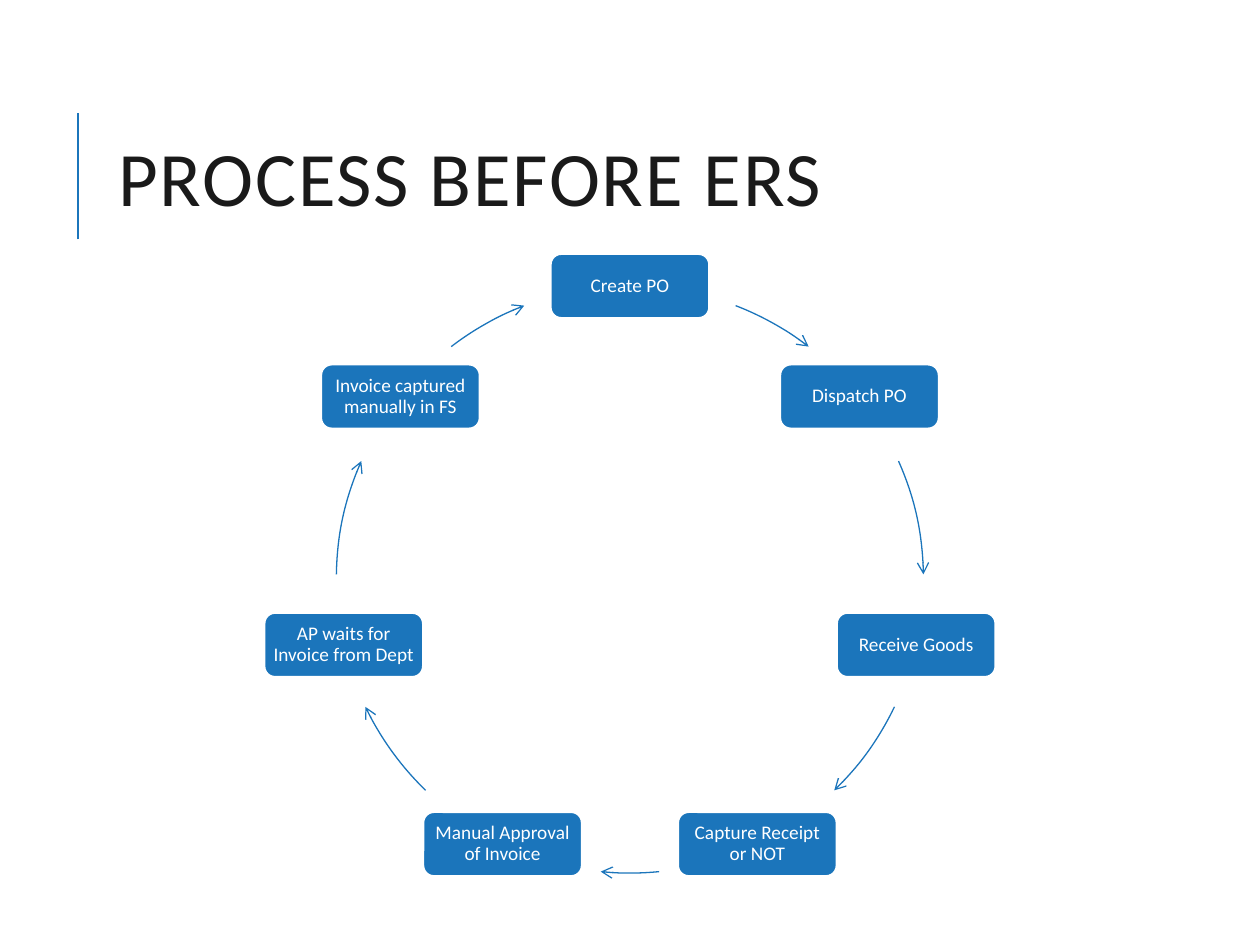
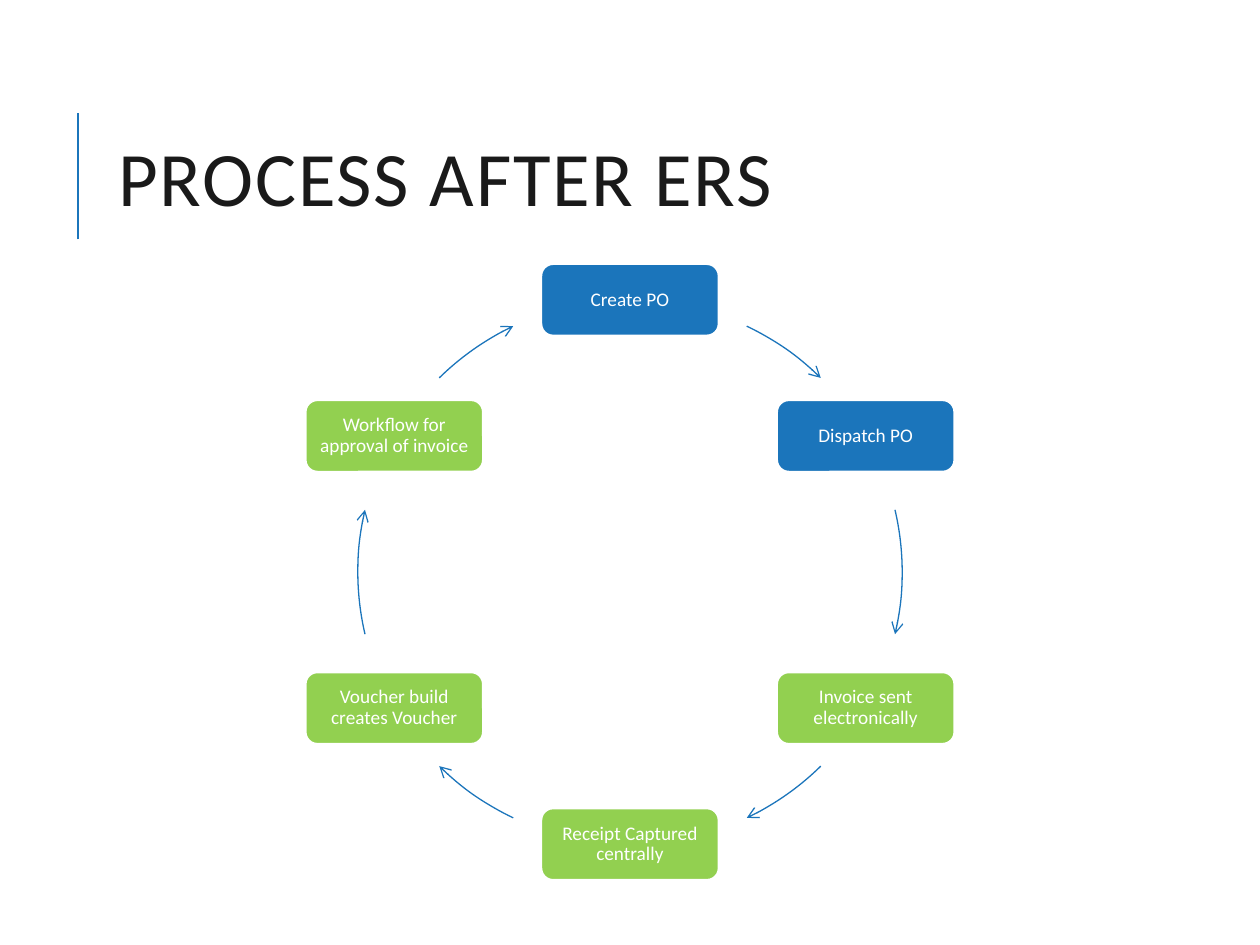
import math

import lxml.etree
import pptx
import pptx.dml.color
import pptx.enum.shapes
import pptx.enum.text
import pptx.oxml.ns
import pptx.util

Inches = pptx.util.Inches
Pt = pptx.util.Pt
MSO_SHAPE = pptx.enum.shapes.MSO_SHAPE
MSO_ANCHOR = pptx.enum.text.MSO_ANCHOR
PP_ALIGN = pptx.enum.text.PP_ALIGN
qn = pptx.oxml.ns.qn

BLUE, GREEN, WHITE, INK = "1B75BB", "92D050", "FFFFFF", "1A1A1A"
FONT = "Calibri"
CENTER_X = 5


def rgb(value):
    return pptx.dml.color.RGBColor.from_string(value)


def style_text(p, size, color, align, spacing):
    p.alignment = align
    p.line_spacing = spacing
    for r in p.runs:
        r.font.size = Pt(size)
        r.font.name = FONT
        r.font.color.rgb = rgb(color)


cycles = [
    {
        "title": "PROCESS BEFORE ERS",
        "center_y": 4.6,
        "radius": 2.33,
        "box": (1.26, 0.51),
        "steps": [
            ("Create PO", BLUE),
            ("Dispatch PO", BLUE),
            ("Receive Goods", BLUE),
            ("Capture Receipt or NOT", BLUE),
            ("Manual Approval of Invoice", BLUE),
            ("AP waits for Invoice from Dept", BLUE),
            ("Invoice captured manually in FS", BLUE),
        ],
        "right_arcs": [(21.1, 37.5), (66.2, 89), (115.7, 135.9)],
        "bottom_arcs": [(174.3, 185.7)],
    },
    {
        "title": "PROCESS AFTER ERS",
        "center_y": 4.54,
        "radius": 2.16,
        "box": (1.41, 0.57),
        "steps": [
            ("Create PO", BLUE),
            ("Dispatch PO", BLUE),
            ("Invoice sent electronically", GREEN),
            ("Receipt Captured centrally", GREEN),
            ("Voucher build creates Voucher", GREEN),
            ("Workflow for approval of invoice", GREEN),
        ],
        "right_arcs": [(25.4, 44.5), (76.8, 103.2), (135.5, 154.6)],
        "bottom_arcs": [],
    },
]

prs = pptx.Presentation()
prs.slide_width = Inches(10)
prs.slide_height = Inches(7.5)

for cycle in cycles:
    s = prs.slides.add_slide(prs.slide_layouts[5])

    rule = s.shapes.add_connector(
        pptx.enum.shapes.MSO_CONNECTOR.STRAIGHT,
        Inches(0.62), Inches(1.9), Inches(0.62), Inches(0.9))
    rule.line.color.rgb = rgb(BLUE)
    rule.line.width = Pt(1.5)
    lxml.etree.SubElement(rule._element.spPr, qn("a:effectLst"))

    title = s.shapes.title
    title.left, title.top = Inches(0.84), Inches(0.64)
    title.width, title.height = Inches(7.97), Inches(1.64)
    tf = title.text_frame
    tf.text = cycle["title"]
    tf.vertical_anchor = MSO_ANCHOR.MIDDLE
    tf.auto_size = pptx.enum.text.MSO_AUTO_SIZE.NONE
    style_text(tf.paragraphs[0], 44, INK, PP_ALIGN.LEFT, 0.8)
    tf.paragraphs[0].runs[0].font._element.set("spc", "100")

    center_y, radius = cycle["center_y"], cycle["radius"]
    width, height = cycle["box"]
    for i, (text, color) in enumerate(cycle["steps"]):
        angle = 2 * math.pi * i / len(cycle["steps"])
        x = CENTER_X + radius * math.sin(angle)
        y = center_y - radius * math.cos(angle)
        sp = s.shapes.add_shape(
            MSO_SHAPE.ROUNDED_RECTANGLE,
            Inches(x - width / 2), Inches(y - height / 2),
            Inches(width), Inches(height))
        sp.shadow.inherit = False
        sp.fill.solid()
        sp.fill.fore_color.rgb = rgb(color)
        sp.line.color.rgb = rgb(WHITE)
        sp.line.width = Pt(1.25)
        tf = sp.text_frame
        tf.text = text
        tf.word_wrap = True
        tf.vertical_anchor = MSO_ANCHOR.MIDDLE
        tf.margin_left = tf.margin_right = Inches(0.04)
        tf.margin_top = tf.margin_bottom = Inches(0.04)
        style_text(tf.paragraphs[0], 11, WHITE, PP_ALIGN.CENTER, 0.9)

    left_arcs = [(360 - end, 360 - start)
                 for start, end in reversed(cycle["right_arcs"])]
    for arc in cycle["right_arcs"] + cycle["bottom_arcs"] + left_arcs:
        sp = s.shapes.add_shape(
            MSO_SHAPE.ARC,
            Inches(CENTER_X - radius), Inches(center_y - radius),
            Inches(2 * radius), Inches(2 * radius))
        for i, degrees in enumerate(arc):
            sp.adjustments[i] = (degrees - 90) % 360 * 0.6
        sp.shadow.inherit = False
        sp.fill.background()
        sp.line.color.rgb = rgb(BLUE)
        sp.line.width = Pt(0.75)
        ln = sp.line._get_or_add_ln()
        lxml.etree.SubElement(ln, qn("a:tailEnd"), type="arrow")

prs.save("out.pptx")
